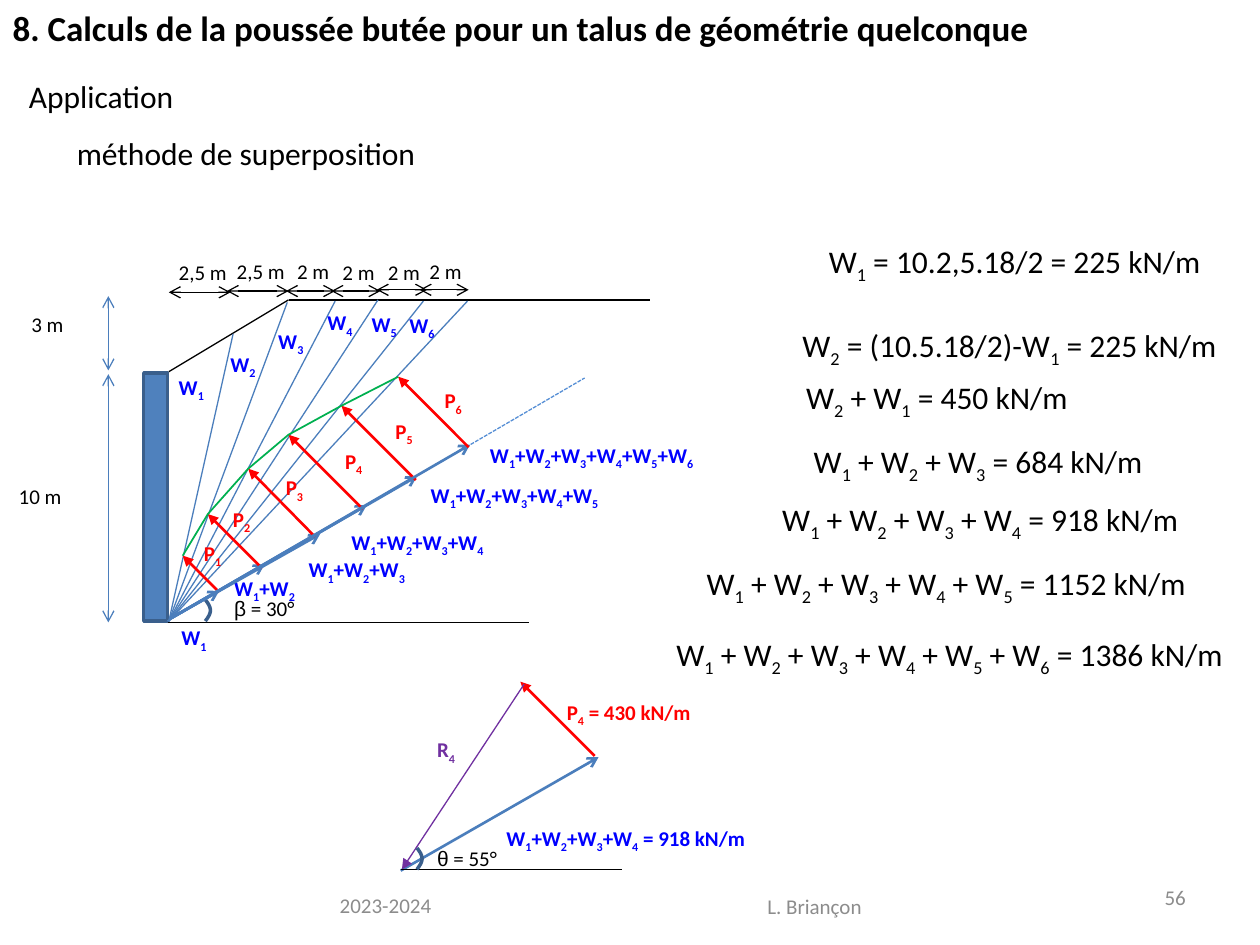
from dataclasses import dataclass
from math import pi, sin

from lxml.etree import SubElement
from pptx import Presentation
from pptx.dml.color import RGBColor
from pptx.enum.dml import MSO_LINE_DASH_STYLE as Dash
from pptx.enum.shapes import MSO_CONNECTOR as Link, MSO_SHAPE as Form
from pptx.enum.text import MSO_ANCHOR as Anchor, MSO_AUTO_SIZE as Fit, PP_ALIGN as Align
from pptx.oxml.ns import qn
from pptx.util import Inches, Pt


@dataclass(frozen=True)
class Theme:
    face: str = "Calibri"
    greek: str = "Arial"
    black: str = "000000"
    gray: str = "8C8C8C"
    wall: str = "4F81BD"
    edge: str = "3A5F8C"
    steel: str = "4B7EBC"
    dash: str = "558ED5"
    blue: str = "0000FF"
    red: str = "FF0000"
    green: str = "00B050"
    plum: str = "7030A0"
    head: int = 20
    body: int = 18
    small: int = 12


T = Theme()


class Sketch:
    def __init__(self, slide):
        self.slide = slide
        self.shapes = slide.shapes

    def style(self, font, size, color=T.black, bold=False, face=T.face):
        font.name, font.size, font.bold = face, Pt(size), bold
        font.color.rgb = RGBColor.from_string(color)

    def place(self, shape, *box):
        shape.left, shape.top, shape.width, shape.height = map(Inches, box)

    def title(self, text, *box):
        shape = self.shapes.title
        self.place(shape, *box)
        frame = shape.text_frame
        frame.text = text
        frame.word_wrap, frame.auto_size = False, Fit.NONE
        par = frame.paragraphs[0]
        par.alignment = Align.LEFT
        self.style(par.runs[0].font, T.head, bold=True)

    def outline(self, items, *box):
        """Plain two-level list; items are (text, indent)."""
        shape = self.slide.placeholders[1]
        self.place(shape, *box)
        frame = shape.text_frame
        frame.text = "\n".join(text for text, _ in items)
        frame.auto_size = Fit.NONE
        for row, (par, (_, left)) in enumerate(zip(frame.paragraphs, items)):
            par.level = row
            par.space_before = Pt(11 * row)
            props = par._p.get_or_add_pPr()
            props.set("marL", str(Inches(left)))
            props.set("indent", "0")
            SubElement(props, qn("a:buNone"))
            self.style(par.runs[0].font, T.body)

    def label(self, text, x, y, w, size=T.small, color=T.black, bold=False, face=T.face):
        """One-line text; the sign after each underscore is a subscript."""
        high = 0.4 if size == T.body else 0.3
        frame = self.shapes.add_textbox(*map(Inches, (x, y, w, high))).text_frame
        frame.word_wrap, frame.auto_size = False, Fit.SHAPE_TO_FIT_TEXT
        par = frame.paragraphs[0]
        first, *rest = text.split("_")
        parts = [(first, False)]
        for part in rest:
            parts += [(part[0], True), (part[1:], False)]
        for part, low in parts:
            if part:
                run = par.add_run()
                run.text = part
                self.style(run.font, size, color, bold, face)
                if low:
                    run._r.get_or_add_rPr().set("baseline", "-25000")
        return par

    def footer(self, text, x, y, w, align):
        frame = self.shapes.add_textbox(*map(Inches, (x, y, w, 0.4))).text_frame
        frame.text = text
        frame.word_wrap, frame.vertical_anchor = True, Anchor.MIDDLE
        par = frame.paragraphs[0]
        par.alignment = align
        self.style(par.runs[0].font, T.small, T.gray)

    def line(self, start, end, color=T.black, width=0.75, head=None, tail=None, dash=None):
        link = self.shapes.add_connector(Link.STRAIGHT, *map(Inches, (*start, *end)))
        link.line.color.rgb = RGBColor.from_string(color)
        link.line.width = Pt(width)
        if dash:
            link.line.dash_style = dash
        props = link._element.spPr
        for tag, kind in (("a:headEnd", head), ("a:tailEnd", tail)):
            if kind:
                SubElement(props.find(qn("a:ln")), qn(tag)).set("type", kind)
        SubElement(props, qn("a:effectLst"))

    def span(self, start, end, color=T.black):
        self.line(start, end, color, head="arrow", tail="arrow")

    def curve(self, points, color, width):
        spots = [(Inches(x), Inches(y)) for x, y in points]
        pen = self.shapes.build_freeform(*spots[0])
        pen.add_line_segments(spots[1:], close=False)
        shape = pen.convert_to_shape()
        shape.fill.background()
        shape.shadow.inherit = False
        shape.line.color.rgb = RGBColor.from_string(color)
        shape.line.width = Pt(width)

    def block(self, *box):
        shape = self.shapes.add_shape(Form.RECTANGLE, *map(Inches, box))
        shape.shadow.inherit = False
        shape.fill.solid()
        shape.fill.fore_color.rgb = RGBColor.from_string(T.wall)
        shape.line.color.rgb = RGBColor.from_string(T.edge)
        shape.line.width = Pt(2)

    def angle(self, sign, text, foot, spot):
        """Small arc rising from foot, with its Greek label."""
        x, y = foot
        steps = [n / 16 for n in range(17)]
        self.curve([(x + 0.04 * sin(pi * t), y - 0.17 * t) for t in steps], T.edge, 2)
        run = self.label(sign, *spot, 0.69, face=T.greek).add_run()
        run.text = text
        self.style(run.font, T.small)


def total(count, glue="+"):
    return glue.join(f"W_{n}" for n in range(1, count + 1))


def main():
    deck = Presentation()
    deck.slide_width, deck.slide_height = Inches(10), Inches(7.5)
    art = Sketch(deck.slides.add_slide(deck.slide_layouts[1]))

    # Headings
    art.title("8. Calculs de la poussée butée pour un talus de géométrie quelconque",
              0, 0, 8.34, 0.44)
    art.outline([("Application", 0), ("méthode de superposition", 0.38)],
                0.13, 0.56, 3.4, 0.88)

    # Wall and slope
    art.block(1.14, 2.96, 0.19, 1.97)
    crest = (2.29, 2.38)
    art.line((1.34, 2.95), crest)
    art.line(crest, (5.16, 2.38))
    art.line((1.33, 4.94), (4.2, 4.94))
    art.line((1.33, 4.93), (4.64, 3), T.dash, dash=Dash.SQUARE_DOT)

    # Dimensions
    for x, end, y, text, left, top, w in (
            (1.34, 1.83, 2.32, "2,5 m", 1.32, 2.01, 0.59),
            (1.8, 2.29, 2.31, "2,5 m", 1.78, 2, 0.59),
            (2.27, 2.66, 2.31, "2 m", 2.26, 2, 0.46),
            (2.63, 3.02, 2.31, "2 m", 2.62, 2.01, 0.46),
            (2.99, 3.39, 2.3, "2 m", 2.98, 2.01, 0.46),
            (3.33, 3.72, 2.3, "2 m", 3.31, 2, 0.46)):
        art.span((x, y), (end, y))
        art.label(text, left, top, w)
    for top, end, text, left, y, w in ((2.35, 2.94, "3 m", 0.15, 2.42, 0.46),
                                       (2.97, 4.94, "10 m", 0.05, 3.79, 0.55)):
        art.span((0.86, top), (0.86, end), T.steel)
        art.label(text, left, y, w)

    # Wedges: top of each ray, place of its weight
    wedges = (((1.85, 2.65), (1.32, 2.92)), ((2.28, 2.4), (1.73, 2.74)),
              ((2.66, 2.39), (2.11, 2.56)), ((3, 2.38), (2.5, 2.41)),
              ((3.36, 2.39), (2.85, 2.42)), ((3.71, 2.39), (3.15, 2.43)))
    for n, (top, spot) in enumerate(wedges, 1):
        art.line(top, (1.34, 4.93), T.steel)
        art.label(f"W_{n}", *spot, 0.41, color=T.blue, bold=True)
    art.angle("β", " = 30°", (1.63, 4.93), (1.76, 4.68))

    # Forces: weight tip, thrust tip and foot, thrust label, weight label
    forces = (((1.74, 4.69), (1.45, 4.41), (1.74, 4.7), (1.52, 4.24), (1.34, 4.91)),
              ((2.1, 4.48), (1.65, 4.08), (2.08, 4.51), (1.75, 3.97), (1.76, 4.52)),
              ((2.54, 4.24), (1.97, 3.72), (2.5, 4.26), (2.17, 3.72), (2.35, 4.37)),
              ((2.91, 4.01), (2.29, 3.45), (2.88, 4.04), (2.64, 3.51), (2.69, 4.15)),
              ((3.31, 3.78), (2.71, 3.22), (3.3, 3.81), (3.04, 3.27), (3.32, 3.78)),
              ((3.73, 3.53), (3.16, 2.99), (3.72, 3.55), (3.43, 3.03), (3.79, 3.46)))
    for n, (tip, peak, foot, name, sums) in enumerate(forces, 1):
        art.line((1.35, 4.91), tip, T.steel, 1.5, tail="arrow")
        art.line(peak, foot, T.red, 1.5, head="triangle")
        art.label(f"P_{n}", *name, 0.35, color=T.red, bold=True)
        art.label(total(n), *sums, 0.3 * n + 0.11, color=T.blue, bold=True)
    art.curve([force[1] for force in forces], T.green, 1)

    # Weights worked out
    for text, x, y, w in (
            ("W_1 = 10.2,5.18/2 = 225 kN/m", 6.48, 1.87, 3.24),
            ("W_2 = (10.5.18/2)-W_1 = 225 kN/m", 6.27, 2.54, 3.57),
            ("W_2 + W_1 = 450 kN/m", 6.3, 2.95, 2.31),
            (total(3, " + ") + " = 684 kN/m", 6.36, 3.46, 2.98),
            (total(4, " + ") + " = 918 kN/m", 6.11, 3.92, 3.45),
            (total(5, " + ") + " = 1152 kN/m", 5.51, 4.43, 4.11),
            (total(6, " + ") + " = 1386 kN/m", 5.27, 4.99, 4.66)):
        art.label(text, x, y, w, T.body)

    # Force triangle
    art.line((4.13, 5.41), (4.72, 6), T.red, 1.5, head="triangle")
    art.line((3.18, 6.91), (4.75, 6.01), T.steel, 1.5, tail="arrow")
    art.line((4.16, 5.43), (3.19, 6.9), T.plum, tail="triangle")
    art.line((3.18, 6.9), (4.94, 6.9))
    art.label(total(4) + " = 918 kN/m", 3.92, 6.5, 2.15, color=T.blue, bold=True)
    art.label("P_4 = 430 kN/m", 4.4, 5.5, 1.24, color=T.red, bold=True)
    art.label("R_4", 3.37, 5.8, 0.35, color=T.plum, bold=True)
    art.angle("θ", " = 55°", (3.31, 6.9), (3.37, 6.66))

    # Footer
    art.footer("2023-2024", 2.06, 6.98, 2, Align.CENTER)
    art.footer("L. Briançon", 4.88, 6.99, 3.17, Align.CENTER)
    art.footer("56", 7.18, 6.92, 2.33, Align.RIGHT)

    deck.save("out.pptx")


if __name__ == "__main__":
    main()
